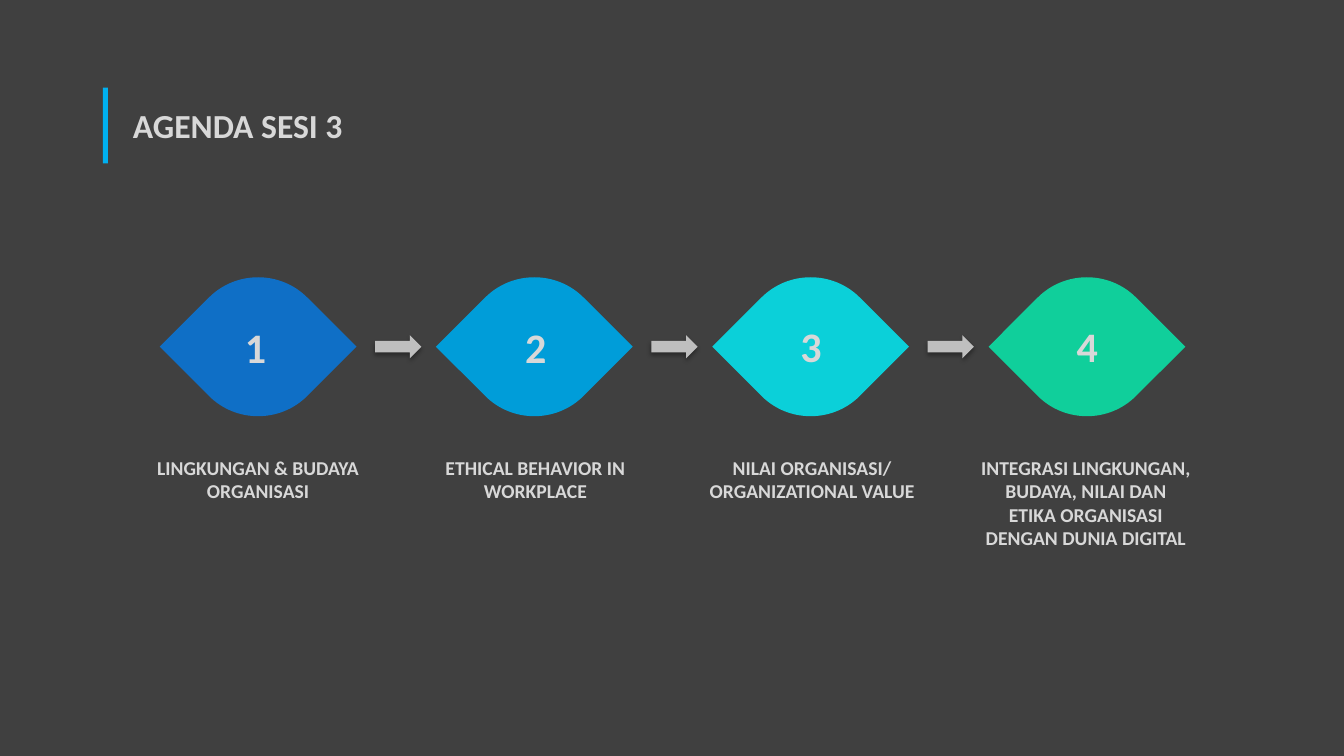
from math import sqrt

from lxml.etree import SubElement
from pptx import Presentation
from pptx.dml.color import RGBColor
from pptx.enum.shapes import MSO_SHAPE as SHAPE
from pptx.enum.text import MSO_AUTO_SIZE as AUTO_SIZE, PP_ALIGN as ALIGN
from pptx.oxml.ns import qn
from pptx.util import Inches, Pt

BACKGROUND = RGBColor(0x40, 0x40, 0x40)
TEXT = RGBColor(0xD8, 0xD8, 0xD8)
ACCENT = RGBColor(0x00, 0xB0, 0xF0)
ARROW = RGBColor(0xBF, 0xBF, 0xBF)
BLUE = RGBColor(0x0F, 0x6F, 0xC6)
SKY = RGBColor(0x00, 0x9D, 0xD9)
CYAN = RGBColor(0x0B, 0xD0, 0xD9)
GREEN = RGBColor(0x10, 0xCF, 0x9B)

FIRST_X, PITCH, MID_Y = 2.56, 2.74, 3.44
RADIUS = 0.69
TIP = RADIUS * sqrt(2)
SHOULDER = RADIUS / sqrt(2)
HANDLE = SHOULDER * 0.55
ARROW_W, ARROW_H, ARROW_GAP = 0.46, 0.23, 1.16
CAPTION_Y = 4.47
NUMBER_W, NUMBER_H = 0.46, 0.61

STEPS = [
    ("LINGKUNGAN & BUDAYA ORGANISASI", BLUE, 1.4, 2.32, 0.57, 2.33, 3.14),
    ("ETHICAL BEHAVIOR IN WORKPLACE", SKY, 4.15, 2.32, 0.57, 5.11, 3.14),
    ("NILAI ORGANISASI/ ORGANIZATIONAL VALUE", CYAN, 6.9, 2.31, 0.81, 7.84, 3.13),
    ("INTEGRASI LINGKUNGAN, BUDAYA, NILAI DAN ETIKA ORGANISASI DENGAN DUNIA DIGITAL",
     GREEN, 9.63, 2.28, 1.04, 10.58, 3.13),
]

prs = Presentation()
prs.slide_width, prs.slide_height = Inches(13.33), Inches(7.5)
s = prs.slides.add_slide(prs.slide_layouts[6])
s.background.fill.solid()
s.background.fill.fore_color.rgb = BACKGROUND


def add_text(text, x, y, w, h, size, align=ALIGN.LEFT):
    tf = s.shapes.add_textbox(Inches(x), Inches(y), Inches(w), Inches(h)).text_frame
    tf.word_wrap = True
    tf.auto_size = AUTO_SIZE.SHAPE_TO_FIT_TEXT
    p = tf.paragraphs[0]
    p.alignment = align
    r = p.add_run()
    r.text = text
    r.font.name, r.font.size, r.font.bold = "Calibri", Pt(size), True
    r.font.color.rgb = TEXT


def paint(sp, color):
    sp.shadow.inherit = False
    sp.fill.solid()
    sp.fill.fore_color.rgb = color
    sp.line.fill.background()


bar = s.shapes.add_shape(SHAPE.RECTANGLE, Inches(1.02), Inches(0.87), Inches(0.05), Inches(0.75))
paint(bar, ACCENT)
add_text("AGENDA SESI 3", 1.22, 0.99, 4.08, 0.5, size=24)

upper = [
    (SHOULDER, -SHOULDER),
    (SHOULDER - HANDLE, -SHOULDER - HANDLE),
    (HANDLE - SHOULDER, -SHOULDER - HANDLE),
    (-SHOULDER, -SHOULDER),
    (-TIP, 0),
]
outline = upper + [(-x, -y) for x, y in upper]

for i, (caption, color, left, width, height, number_x, number_y) in enumerate(STEPS):
    x = FIRST_X + i * PITCH
    points = [(Inches(x + dx), Inches(MID_Y + dy)) for dx, dy in outline]
    builder = s.shapes.build_freeform(*points[0])
    builder.add_line_segments(points[1:], close=True)
    sp = builder.convert_to_shape()
    paint(sp, color)
    segments = list(sp.element.iter(qn("a:lnTo")))
    for arc in (segments[0:3], segments[5:8]):
        curve = arc[0].makeelement(qn("a:cubicBezTo"))
        arc[0].addprevious(curve)
        for segment in arc:
            curve.append(segment[0])
            segment.getparent().remove(segment)
    add_text(str(i + 1), number_x, number_y, NUMBER_W, NUMBER_H, size=30)
    add_text(caption, left, CAPTION_Y, width, height, size=14, align=ALIGN.CENTER)

for i in range(len(STEPS) - 1):
    sp = s.shapes.add_shape(SHAPE.RIGHT_ARROW, Inches(FIRST_X + i * PITCH + ARROW_GAP),
                            Inches(MID_Y - ARROW_H / 2), Inches(ARROW_W), Inches(ARROW_H))
    paint(sp, ARROW)
    effects = sp.element.spPr.find(qn("a:effectLst"))
    shadow = SubElement(effects, qn("a:outerShdw"), blurRad=str(Pt(3.1)), dist=str(Pt(1.8)),
                        dir="5400000", rotWithShape="0")
    SubElement(SubElement(shadow, qn("a:srgbClr"), val="000000"), qn("a:alpha"), val="34000")

prs.save("out.pptx")
